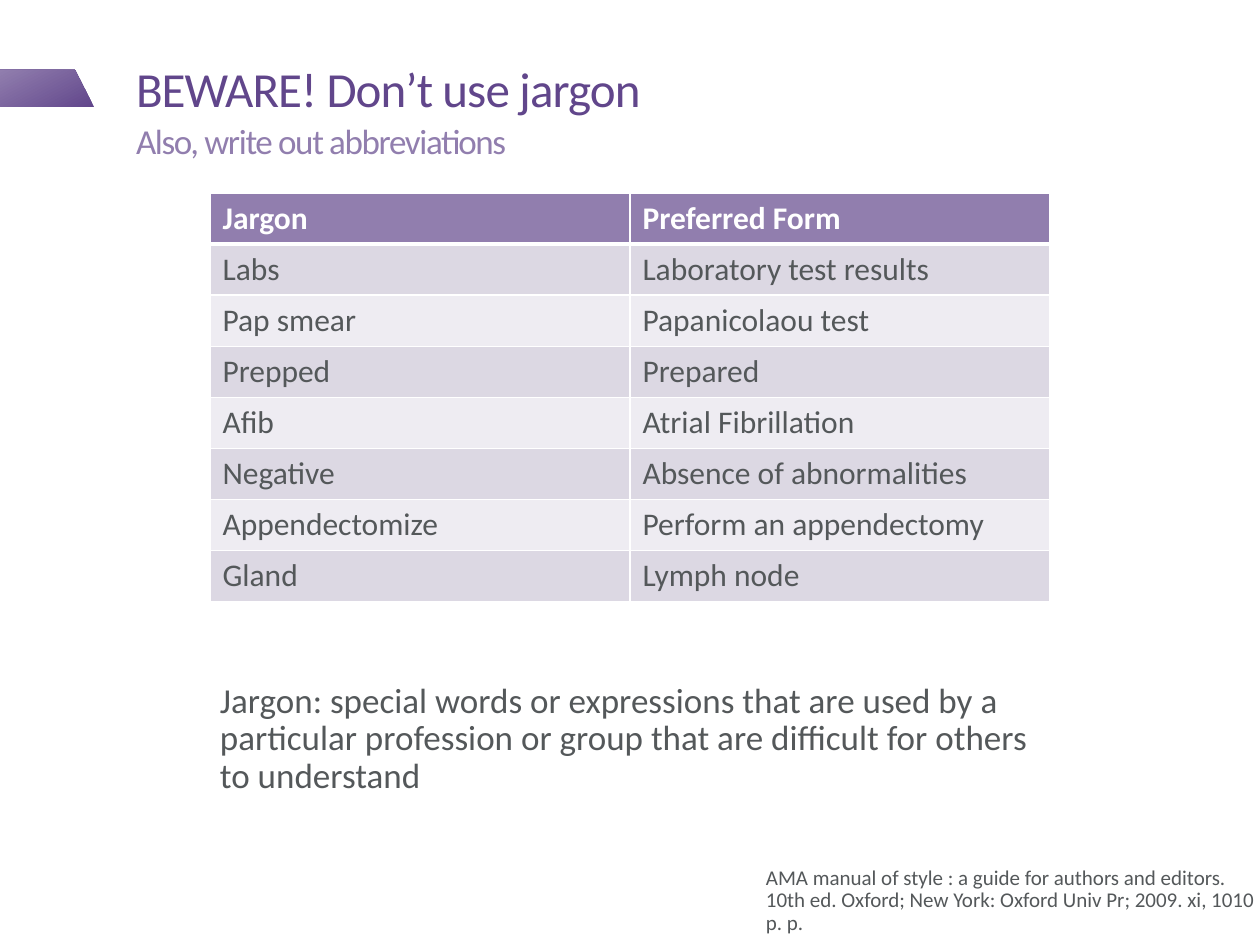
from lxml import etree
from pptx import Presentation
from pptx import util as u
from pptx.dml.color import RGBColor
from pptx.enum import text
from pptx.oxml import ns

SCALE = 914400 / 126  # EMU per px
FONT = "Calibri"
PURPLE = RGBColor(0x61, 0x46, 0x8B)
LILAC = RGBColor(0x91, 0x7E, 0xAE)
BAND_DARK = RGBColor(0xDC, 0xD8, 0xE3)
BAND_LIGHT = RGBColor(0xEE, 0xEC, 0xF2)
GREY = RGBColor(0x54, 0x58, 0x5A)
WHITE = RGBColor(0xFF, 0xFF, 0xFF)

TERMS = [
    ("Jargon", "Preferred Form"),
    ("Labs", "Laboratory test results"),
    ("Pap smear", "Papanicolaou test"),
    ("Prepped", "Prepared"),
    ("Afib", "Atrial Fibrillation"),
    ("Negative", "Absence of abnormalities"),
    ("Appendectomize", "Perform an appendectomy"),
    ("Gland", "Lymph node"),
]
DEFINITION = ("Jargon: special words or expressions that are used by a particular "
              "profession or group that are difficult for others to understand")
CITATION = ("AMA manual of style : a guide for authors and editors. 10th ed. Oxford; "
            "New York: Oxford Univ Pr; 2009. xi, 1010 p. p.")


def px(length):
    return u.Emu(round(length * SCALE))


def set_all(target, values):
    for name, value in values.items():
        setattr(target, name, value)


def place(shape, box):
    set_all(shape, dict(zip(("left", "top", "width", "height"), map(px, box))))


def write(frame, words, size, color, spacing=0, line_spacing=0.9, margins=(0, 0, 0, 0),
          anchor=text.MSO_ANCHOR.TOP):
    sides = ("margin_left", "margin_top", "margin_right", "margin_bottom")
    set_all(frame, dict(zip(sides, map(px, margins))))
    set_all(frame, {"word_wrap": True, "auto_size": text.MSO_AUTO_SIZE.NONE,
                    "vertical_anchor": anchor})
    para = frame.paragraphs[0]
    properties = para._p.get_or_add_pPr()
    set_all(para, {"alignment": text.PP_ALIGN.LEFT, "line_spacing": line_spacing,
                   "space_before": u.Pt(0)})
    properties.set("marL", "0")
    properties.set("indent", "0")
    etree.SubElement(properties, ns.qn("a:buNone"))
    span = para.add_run()
    span.text = words
    set_all(span.font, {"name": FONT, "size": u.Pt(size)})
    span.font.color.rgb = color
    if spacing:
        span._r.get_or_add_rPr().set("spc", str(spacing))


def add_marker(page, box):
    """Slanted gradient tab at the slide's left edge."""
    left, top, width, height = box
    builder = page.shapes.build_freeform(left, top, scale=SCALE)
    builder.add_line_segments([
        (left + width * 0.8, top),
        (left + width, top + height),
        (left, top + height),
    ], close=True)
    marker = builder.convert_to_shape()
    marker.shadow.inherit = False
    marker.line.fill.background()
    marker.fill.gradient()
    marker.fill.gradient_angle = 118
    for stop, color in zip(marker.fill.gradient_stops, (PURPLE, LILAC)):
        stop.color.rgb = color


def add_heading(page, box):
    """Title with the subtitle below it."""
    left, top, width, height = box
    title, subtitle = page.shapes.title, page.placeholders[1]
    heading = {"line_spacing": 0.85, "margins": (0, 0, 13, 6)}
    place(title, (left, top, width, height))
    write(title.text_frame, "BEWARE! Don’t use jargon", 28, PURPLE, -50,
          anchor=text.MSO_ANCHOR.BOTTOM, **heading)
    place(subtitle, (left, top + height + 2, 945, 63))
    write(subtitle.text_frame, "Also, write out abbreviations", 20, LILAC, -80, **heading)


def set_borders(cell, widths):
    properties = cell._tc.get_or_add_tcPr()
    for index, (side, width) in enumerate(widths.items()):
        line = etree.Element(ns.qn(f"a:ln{side}"), w=str(u.Pt(width)))
        fill = etree.SubElement(line, ns.qn("a:solidFill"))
        etree.SubElement(fill, ns.qn("a:srgbClr"), val=str(WHITE))
        properties.insert(index, line)


def add_terms(page, box):
    """Table of jargon and preferred forms."""
    table = page.shapes.add_table(len(TERMS), 2, *map(px, box)).table
    for row, words in enumerate(TERMS):
        header = row == 0
        band = LILAC if header else BAND_DARK if row % 2 else BAND_LIGHT
        for column, word in enumerate(words):
            cell = table.cell(row, column)
            cell.fill.solid()
            cell.fill.fore_color.rgb = band
            set_borders(cell, {"L": 1, "R": 1, "T": 3 if row == 1 else 1,
                               "B": 3 if header else 1})
            span = cell.text_frame.paragraphs[0].add_run()
            span.text = word
            set_all(span.font, {"name": FONT, "size": u.Pt(18), "bold": header})
            span.font.color.rgb = WHITE if header else GREY


def add_note(page, box, words, size):
    """Plain paragraph in grey."""
    note = page.shapes.add_textbox(*map(px, box))
    write(note.text_frame, words, size, GREY)


def main():
    deck = Presentation()
    set_all(deck, {"slide_width": px(1260), "slide_height": px(945)})
    page = deck.slides.add_slide(deck.slide_layouts[1])
    add_marker(page, (0, 70, 94, 37))
    add_heading(page, (136, 19, 1063, 105))
    add_terms(page, (210, 193, 840, 408))
    add_note(page, (220, 683, 819, 116), DEFINITION, 20)
    add_note(page, (766, 867, 494, 73), CITATION, 12)
    deck.save("out.pptx")


if __name__ == "__main__":
    main()
